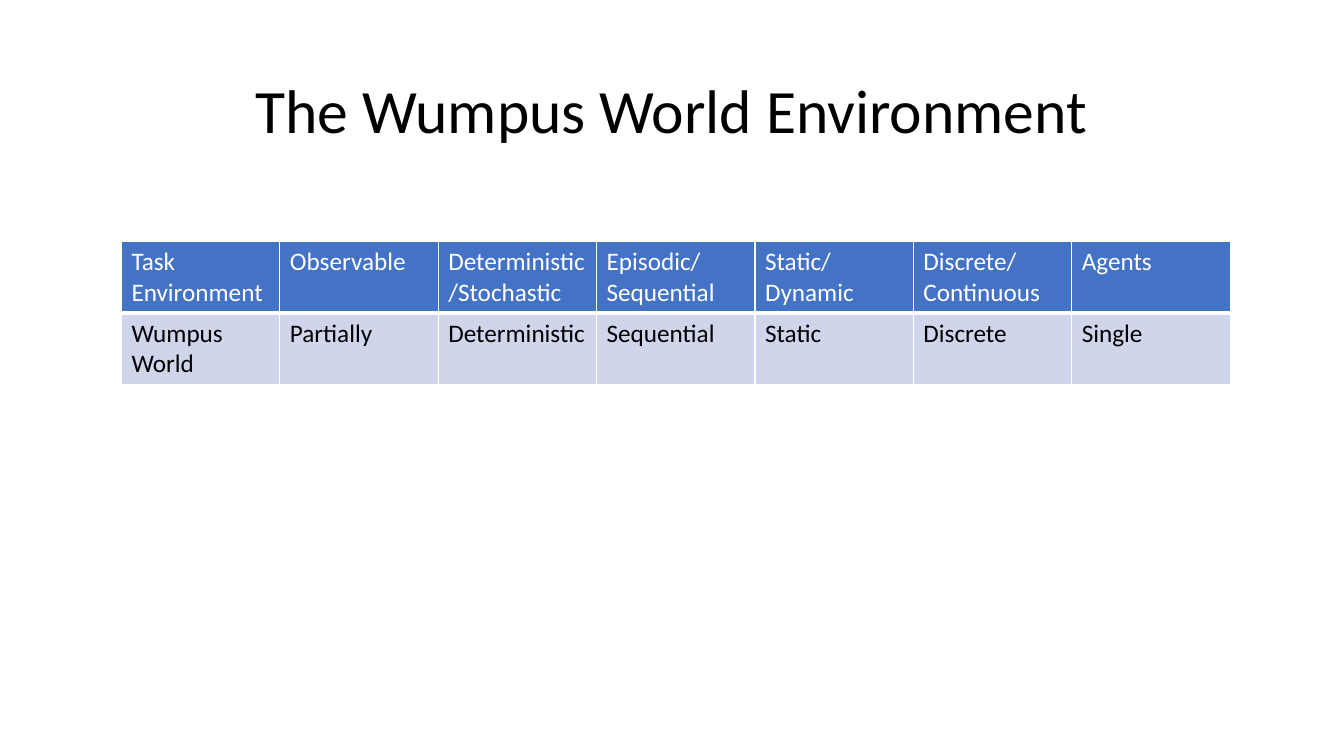
from dataclasses import dataclass

from lxml.etree import SubElement as Sub
from pptx import Presentation
from pptx.dml.color import RGBColor as RGB
from pptx.enum.text import MSO_ANCHOR as Anchor, MSO_AUTO_SIZE as Fit, PP_ALIGN as Align
from pptx.oxml.ns import qn
from pptx.slide import Slide
from pptx.table import _Cell as Cell
from pptx.text.text import _Paragraph as Par
from pptx.util import Pt

FONT = "Calibri"
COLORS = {"white": "FFFFFF", "black": "000000", "blue": "4472C4", "pale": "CFD5EA"}


@dataclass
class Row:
    texts: list[str]
    fill: str
    ink: str
    base: float  # width of the bottom border


ROWS = [
    Row(["Task Environment", "Observable", "Deterministic/Stochastic",
         "Episodic/Sequential", "Static/Dynamic", "Discrete/Continuous", "Agents"],
        "blue", "white", 3),
    Row(["Wumpus World", "Partially", "Deterministic", "Sequential",
         "Static", "Discrete", "Single"],
        "pale", "black", 1),
]


def add_run(par: Par, text: str, size: float, ink: str) -> None:
    run = par.add_run()
    run.text = text
    font = run.font
    font.name, font.size, font.bold = FONT, Pt(size), False
    font.color.rgb = RGB.from_string(COLORS[ink])


def add_edges(cell: Cell, base: float) -> None:
    """Give the cell white borders; call before setting its fill."""
    props = cell._tc.get_or_add_tcPr()
    for side, width in zip("LRTB", (1, 1, 1, base)):
        line = Sub(props, qn(f"a:ln{side}"), w=str(Pt(width)))
        fill = Sub(line, qn("a:solidFill"))
        Sub(fill, qn("a:srgbClr"), val=COLORS["white"])


def add_title(slide: Slide, text: str) -> None:
    title = slide.shapes.title
    title.left, title.top = Pt(66), Pt(28.75)
    title.width, title.height = Pt(828), Pt(104.4)
    frame = title.text_frame
    frame.auto_size, frame.vertical_anchor = Fit.NONE, Anchor.MIDDLE
    par = frame.paragraphs[0]
    par.alignment, par.line_spacing = Align.CENTER, 0.9
    add_run(par, text, 44, "black")


def add_grid(slide: Slide, rows: list[Row]) -> None:
    count, high = len(rows), 29.2
    table = slide.shapes.add_table(
        count, len(rows[0].texts), Pt(86.75), Pt(172.5), Pt(792), Pt(high * count)
    ).table
    for r, row in enumerate(rows):
        for c, text in enumerate(row.texts):
            cell = table.cell(r, c)
            add_edges(cell, row.base)
            cell.fill.solid()
            cell.fill.fore_color.rgb = RGB.from_string(COLORS[row.fill])
            add_run(cell.text_frame.paragraphs[0], text, 18, row.ink)


def main() -> None:
    deck = Presentation()
    deck.slide_width, deck.slide_height = Pt(960), Pt(540)
    slide = deck.slides.add_slide(deck.slide_layouts[5])
    add_title(slide, "The Wumpus World Environment")
    add_grid(slide, ROWS)
    deck.save("out.pptx")


if __name__ == "__main__":
    main()
